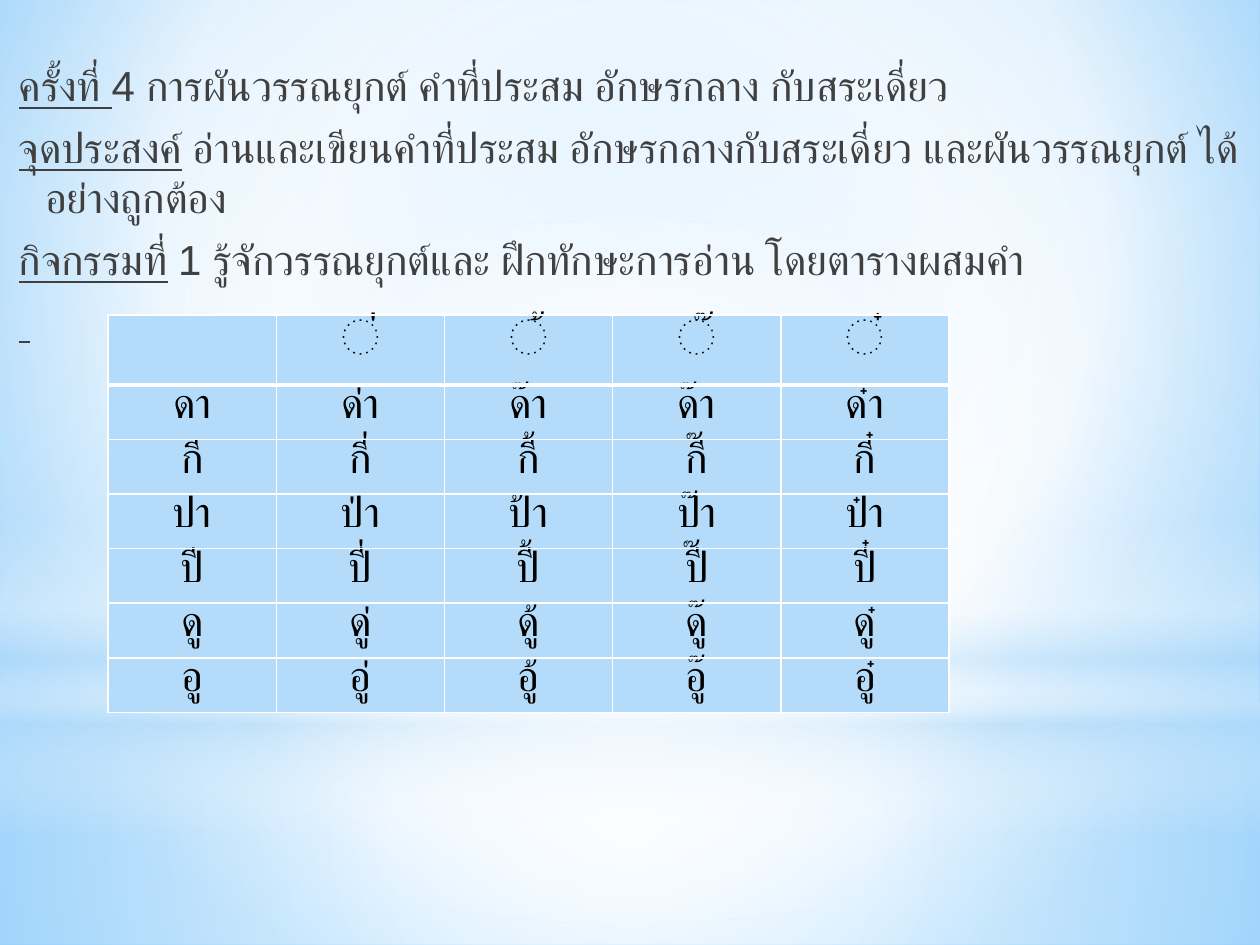
from lxml.etree import SubElement
from pptx import Presentation
from pptx.dml.color import RGBColor
from pptx.enum.shapes import MSO_SHAPE
from pptx.enum.text import MSO_ANCHOR, MSO_AUTO_SIZE, PP_ALIGN
from pptx.oxml import parse_xml
from pptx.oxml.ns import nsdecls, qn
from pptx.util import Cm, Pt

COLORS = {
    "white": "FFFFFF",
    "pale": "B4DCFA",
    "sky": "9ED5FF",
    "azure": "5BB9FF",
    "text": "404040",
    "word": "000000",
}
WIDTH, HEIGHT = 25.4, 19.05
CENTER = (50, 50, 50, 50)

# Each line: underlined label, then plain text
LESSON_LINES = [
    ("ครั้งที่ ", "4 การผันวรรณยุกต์ คำที่ประสม อักษรกลาง กับสระเดี่ยว"),
    ("จุดประสงค์", " อ่านและเขียนคำที่ประสม อักษรกลางกับสระเดี่ยว "
                  "และผันวรรณยุกต์ ได้อย่างถูกต้อง"),
    ("กิจกรรมที่", " 1 รู้จักวรรณยุกต์และ ฝึกทักษะการอ่าน โดยตารางผสมคำ"),
    (" ", ""),
]
TONE_TABLE = [
    ["", "่", "้", "๊", "๋"],
    ["ดา", "ด่า", "ด๊า", "ด๊า", "ด๋า"],
    ["กี", "กี่", "กี้", "กี๊", "กี๋"],
    ["ปา", "ป่า", "ป้า", "ป๊า", "ป๋า"],
    ["ปี", "ปี่", "ปี้", "ปี๊", "ปี๋"],
    ["ดู", "ดู่", "ดู้", "ดู๊", "ดู๋"],
    ["อู", "อู่", "อู้", "อู๊", "อู๋"],
]


class LessonSlide:
    font_name = "Arial"
    text_size = 24
    tone_size = 28

    def __init__(self, presentation):
        self.slide = presentation.slides.add_slide(presentation.slide_layouts[1])
        title = self.slide.shapes.title._element
        title.getparent().remove(title)

    def set_font(self, paragraph, size, color):
        paragraph.font.name = self.font_name
        paragraph.font.size = Pt(size)
        paragraph.font.color.rgb = RGBColor.from_string(COLORS[color])

    def gradient(self, fill, owner, stops, focus=None):
        """Stops are (position, colour, opacity); without a focus it runs down."""
        fill.gradient()
        grad = next(owner.iter(qn("a:gradFill")))
        for child in list(grad):
            grad.remove(child)
        stop_list = SubElement(grad, qn("a:gsLst"))
        for position, color, opacity in stops:
            stop = SubElement(stop_list, qn("a:gs"), pos=str(position * 1000))
            rgb = SubElement(stop, qn("a:srgbClr"), val=COLORS[color])
            if opacity < 100:
                SubElement(rgb, qn("a:alpha"), val=str(opacity * 1000))
        if focus:
            circle = SubElement(grad, qn("a:path"), path="circle")
            SubElement(circle, qn("a:fillToRect"),
                       {side: str(value * 1000) for side, value in zip("ltrb", focus)})
        else:
            SubElement(grad, qn("a:lin"), ang="5400000", scaled="0")

    def background(self, stops, focus):
        self.gradient(self.slide.background.fill, self.slide._element, stops, focus)

    def glow(self, preset, top, height, stops, focus=CENTER):
        band = self.slide.shapes.add_shape(preset, 0, Cm(top), Cm(WIDTH), Cm(height))
        band.shadow.inherit = False
        band.line.fill.background()
        self.gradient(band.fill, band._element.spPr, stops, focus)

    def body(self, lines):
        body = self.slide.placeholders[1]
        self.slide.shapes._spTree.append(body._element)  # in front of the glows
        body.left, body.top, body.width, body.height = 0, 0, Cm(WIDTH), Cm(HEIGHT)
        frame = body.text_frame
        frame.word_wrap = True
        frame.auto_size = MSO_AUTO_SIZE.NONE
        frame.vertical_anchor = MSO_ANCHOR.TOP
        frame.margin_left, frame.margin_top = Cm(0.38), Cm(1.2)
        for index, (label, detail) in enumerate(lines):
            line = frame.add_paragraph() if index else frame.paragraphs[0]
            self.set_font(line, self.text_size, "text")
            line.space_before, line.space_after = Pt(3.5), Pt(3)
            properties = line._p.get_or_add_pPr()
            properties.set("marL", str(Cm(0.53)))
            properties.set("indent", str(-Cm(0.53)))
            properties.insert_element_before(
                parse_xml(f"<a:buNone {nsdecls('a')}/>"), "a:tabLst", "a:defRPr")
            for text, underlined in ((label, True), (detail, False)):
                if text:
                    run = line.add_run()
                    run.text = text
                    run.font.underline = underlined

    def border(self, cell, side, width):
        edge = SubElement(cell._tc.get_or_add_tcPr(), qn(f"a:ln{side}"), w=str(Pt(width)))
        SubElement(SubElement(edge, qn("a:solidFill")), qn("a:srgbClr"),
                   val=COLORS["white"])

    def table(self, rows, left, top, column_width, header_height, row_height):
        heights = [header_height] + [row_height] * (len(rows) - 1)
        table = self.slide.shapes.add_table(
            len(rows), len(rows[0]), Cm(left), Cm(top),
            Cm(column_width * len(rows[0])), Cm(sum(heights))).table
        for column in table.columns:
            column.width = Cm(column_width)
        for r, words in enumerate(rows):
            table.rows[r].height = Cm(heights[r])
            for c, word in enumerate(words):
                cell = table.cell(r, c)
                cell.margin_top = cell.margin_bottom = 0
                for side in "LRTB":
                    self.border(cell, side, 3 if r == 0 and side == "B" else 1)
                cell.fill.solid()
                cell.fill.fore_color.rgb = RGBColor.from_string(COLORS["pale"])
                cell.text = word
                paragraph = cell.text_frame.paragraphs[0]
                paragraph.alignment = PP_ALIGN.CENTER
                self.set_font(paragraph, self.text_size if r else self.tone_size, "word")
                paragraph.font.bold = False


def main():
    presentation = Presentation()
    presentation.slide_width, presentation.slide_height = Cm(WIDTH), Cm(HEIGHT)
    lesson = LessonSlide(presentation)

    # Sky backdrop
    lesson.background([(0, "sky", 100), (60, "white", 100), (100, "azure", 100)],
                      (20, 10, 20, 60))
    lesson.glow(MSO_SHAPE.RECTANGLE, 14.17, 4.88,
                [(0, "white", 91), (37, "white", 76), (100, "pale", 79)])
    lesson.glow(MSO_SHAPE.RECTANGLE, 0, 14.17,
                [(0, "white", 89), (48, "white", 62), (100, "pale", 79)])
    lesson.glow(MSO_SHAPE.RECTANGLE, 10.46, 6.35,
                [(0, "white", 0), (29, "white", 30), (45, "pale", 40),
                 (55, "white", 26), (65, "pale", 60), (100, "white", 0)], focus=None)
    lesson.glow(MSO_SHAPE.OVAL, 4.45, 14.17, [(0, "white", 100), (56, "white", 0)])

    # Lesson heading, aim and activity
    lesson.body(LESSON_LINES)

    # Tone mark practice table
    lesson.table(TONE_TABLE, left=2.18, top=6.35, column_width=3.39,
                 header_height=1.41, row_height=1.1)

    presentation.save("out.pptx")


if __name__ == "__main__":
    main()
